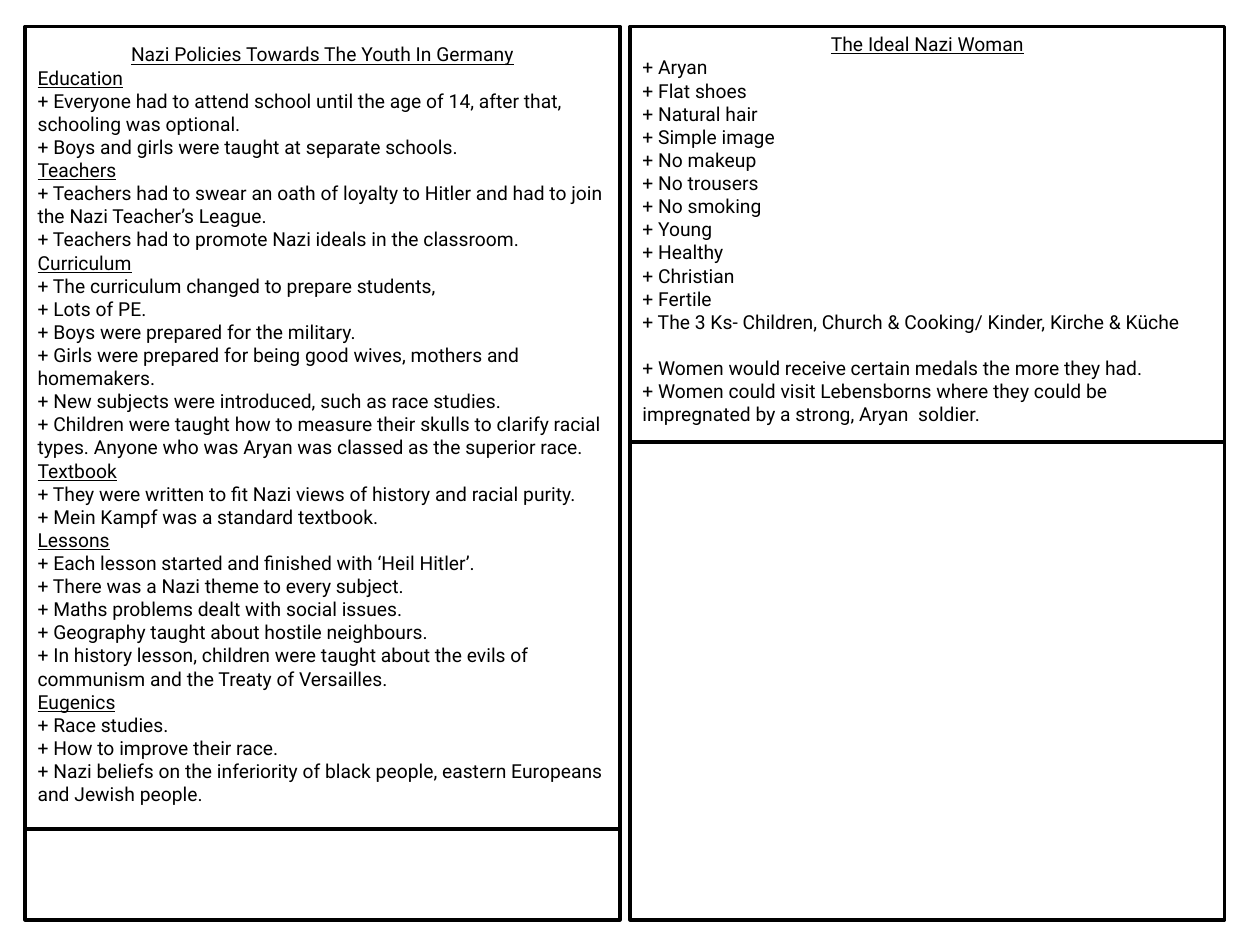
from dataclasses import dataclass

from lxml import etree
from pptx import Presentation
from pptx import util as u
from pptx.dml.color import RGBColor
from pptx.enum import shapes, text
from pptx.oxml.ns import qn


@dataclass(frozen=True)
class Theme:
    ink = RGBColor(0, 0, 0)
    paper = RGBColor(255, 255, 255)
    font = "Roboto"
    size = u.Pt(11)
    border = u.Pt(2)
    divider = u.Pt(2.25)
    section_gap = u.Pt(13)


PX = 9144  # 100 px to the inch
PANEL_TOP, PANEL_WIDTH, PANEL_HEIGHT = 21, 472, 709

YOUTH_POLICIES = [
    "Nazi Policies Towards The Youth In Germany",
    "Education",
    "+ Everyone had to attend school until the age of 14, after that, schooling was optional.",
    "+ Boys and girls were taught at separate schools.",
    "Teachers",
    "+ Teachers had to swear an oath of loyalty to Hitler and had to join the Nazi Teacher’s League.",
    "+ Teachers had to promote Nazi ideals in the classroom.",
    "Curriculum",
    "+ The curriculum changed to prepare students,",
    "+ Lots of PE.",
    "+ Boys were prepared for the military.",
    "+ Girls were prepared for being good wives, mothers and homemakers.",
    "+ New subjects were introduced, such as race studies.",
    "+ Children were taught how to measure their skulls to clarify racial types. "
    "Anyone who was Aryan was classed as the superior race.",
    "Textbook",
    "+ They were written to fit Nazi views of history and racial purity.",
    "+ Mein Kampf was a standard textbook.",
    "Lessons",
    "+ Each lesson started and finished with ‘Heil Hitler’.",
    "+ There was a Nazi theme to every subject.",
    "+ Maths problems dealt with social issues.",
    "+ Geography taught about hostile neighbours.",
    "+ In history lesson, children were taught about the evils of communism "
    "and the Treaty of Versailles.",
    "Eugenics",
    "+ Race studies.",
    "+ How to improve their race.",
    "+ Nazi beliefs on the inferiority of black people, eastern Europeans and Jewish people.",
]
IDEAL_WOMAN = [
    "The Ideal Nazi Woman",
    "+ Aryan",
    "+ Flat shoes",
    "+ Natural hair",
    "+ Simple image",
    "+ No makeup",
    "+ No trousers",
    "+ No smoking",
    "+ Young",
    "+ Healthy",
    "+ Christian",
    "+ Fertile",
    "+ The 3 Ks- Children, Church & Cooking/ Kinder, Kirche & Küche",
    "+ Women would receive certain medals the more they had.",
    "+ Women could visit Lebensborns where they could be impregnated by a strong, Aryan  soldier.",
]
SECTION_START = "+ Women would receive"

# left, notes top, notes height, divider y, lines
PANELS = [
    (20, 29, 677, 658, YOUTH_POLICIES),
    (500, 21, 343, 351, IDEAL_WOMAN),
]

deck = Presentation()
deck.slide_width, deck.slide_height = 1000 * PX, 750 * PX
slide = deck.slides.add_slide(deck.slide_layouts[6])

for left, notes_top, notes_height, divider_y, lines in PANELS:
    panel = slide.shapes.add_shape(
        shapes.MSO_SHAPE.RECTANGLE,
        left * PX, PANEL_TOP * PX, PANEL_WIDTH * PX, PANEL_HEIGHT * PX)
    panel.shadow.inherit = False
    panel.fill.solid()
    panel.fill.fore_color.rgb = Theme.paper
    panel.line.color.rgb = Theme.ink
    panel.line.width = Theme.border

    notes = slide.shapes.add_textbox(
        left * PX, notes_top * PX, PANEL_WIDTH * PX, notes_height * PX).text_frame
    notes.word_wrap = True
    notes.auto_size = text.MSO_AUTO_SIZE.SHAPE_TO_FIT_TEXT
    notes.text = "\n".join(lines)
    for paragraph in notes.paragraphs:
        paragraph.font.name = Theme.font
        paragraph.font.size = Theme.size
        paragraph.font.color.rgb = Theme.ink
        is_heading = not paragraph.text.startswith("+")
        for run in paragraph.runs:
            run.font.underline = is_heading
        if paragraph.text.startswith(SECTION_START):
            paragraph.space_before = Theme.section_gap
    notes.paragraphs[0].alignment = text.PP_ALIGN.CENTER

for left, notes_top, notes_height, divider_y, lines in PANELS:
    divider = slide.shapes.add_connector(
        shapes.MSO_CONNECTOR.STRAIGHT,
        left * PX, divider_y * PX, (left + PANEL_WIDTH) * PX, divider_y * PX)
    divider.line.color.rgb = Theme.ink
    divider.line.width = Theme.divider
    etree.SubElement(divider.element.spPr, qn("a:effectLst"))

deck.save("out.pptx")
